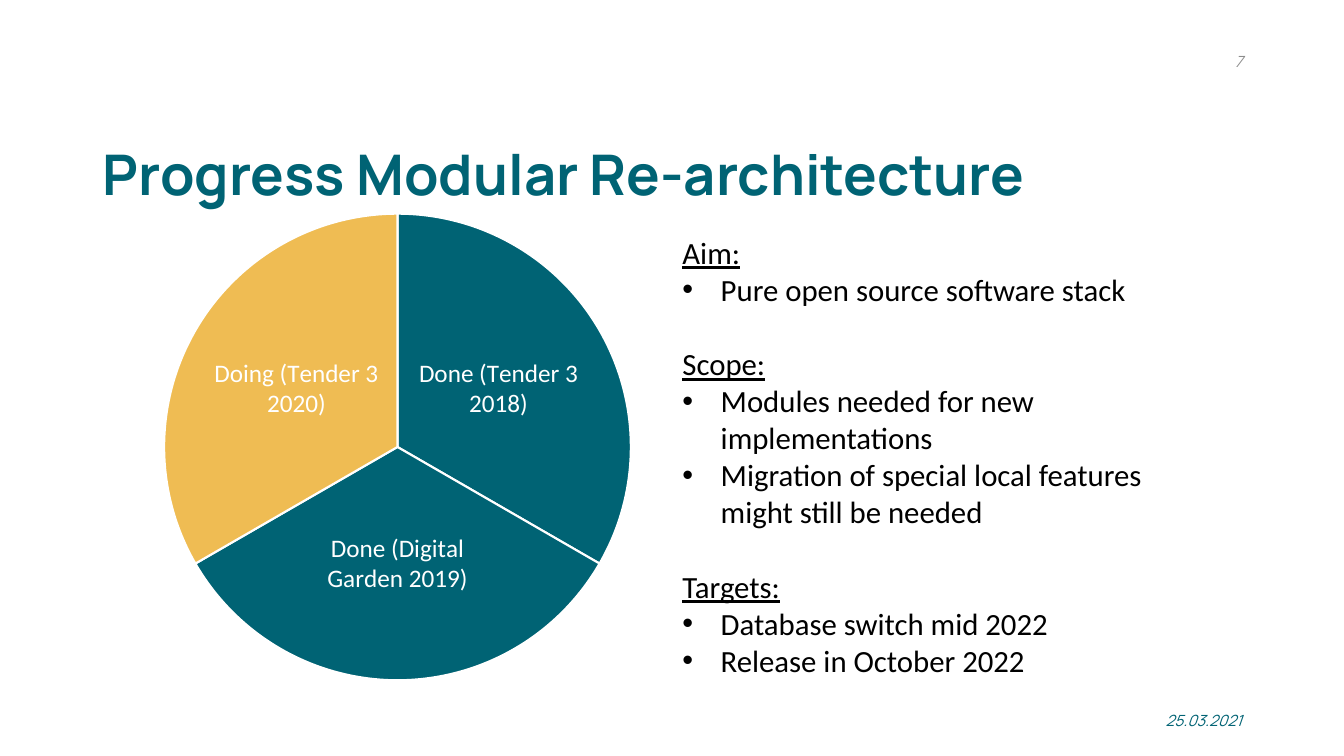
from dataclasses import dataclass

import pptx
import pptx.chart.data
import pptx.dml.color
import pptx.enum.chart
import pptx.enum.text
import pptx.oxml
import pptx.oxml.ns
import pptx.util

Inches = pptx.util.Inches
Pt = pptx.util.Pt
Align = pptx.enum.text.PP_ALIGN
Anchor = pptx.enum.text.MSO_ANCHOR


@dataclass(frozen=True)
class Theme:
    teal: str = "006374"
    amber: str = "EFBC53"
    gray: str = "8C8C8C"
    black: str = "000000"
    white: str = "FFFFFF"
    heading_font: str = "Manrope"
    body_font: str = "Calibri"
    title_size: float = 40
    body_size: float = 22
    label_size: float = 18
    footer_size: float = 11
    section_gap: float = 26.8


THEME = Theme()

STAGES = [
    ("Done (Tender 3 2018)", THEME.teal),
    ("Done (Digital Garden 2019)", THEME.teal),
    ("Doing (Tender 3 2020)", THEME.amber),
]

SECTIONS = [
    ("Aim:", ["Pure open source software stack"]),
    ("Scope:", ["Modules needed for new implementations",
                "Migration of special local features might still be needed"]),
    ("Targets:", ["Database switch mid 2022", "Release in October 2022"]),
]


def rgb(color):
    return pptx.dml.color.RGBColor.from_string(color)


def style_font(font, name, size, color, bold=False, italic=False, underline=False):
    font.name = name
    font.size = Pt(size)
    font.color.rgb = rgb(color)
    font.bold = bold
    font.italic = italic
    font.underline = underline


def add_frame(slide, left, top, width, height, anchor=Anchor.MIDDLE):
    shape = slide.shapes.add_textbox(Inches(left), Inches(top), Inches(width), Inches(height))
    frame = shape.text_frame
    frame.word_wrap = True
    frame.vertical_anchor = anchor
    return frame


def write(paragraph, text, align=Align.LEFT, line_spacing=None, space_before=0, **font_format):
    paragraph.alignment = align
    paragraph.line_spacing = line_spacing
    if space_before:
        paragraph.space_before = Pt(space_before)
    run = paragraph.add_run()
    run.text = text
    style_font(run.font, **font_format)


def add_bullet(paragraph):
    properties = paragraph._p.get_or_add_pPr()
    properties.set("marL", str(Inches(0.38)))
    properties.set("indent", str(Inches(-0.38)))
    namespace = pptx.oxml.ns.nsdecls("a")
    properties.append(pptx.oxml.parse_xml(f'<a:buFont {namespace} typeface="Arial"/>'))
    properties.append(pptx.oxml.parse_xml(f'<a:buChar {namespace} char="•"/>'))


def add_corner_note(slide, text, top, color):
    frame = add_frame(slide, 9.42, top, 3, 0.4)
    write(frame.paragraphs[0], text, align=Align.RIGHT, name=THEME.heading_font,
          size=THEME.footer_size, color=color, italic=True)


def add_sections(slide):
    frame = add_frame(slide, 6.67, 2.27, 5.45, 4.68, anchor=Anchor.TOP)
    body = dict(name=THEME.body_font, size=THEME.body_size, color=THEME.black)
    for index, (heading, points) in enumerate(SECTIONS):
        paragraph = frame.add_paragraph() if index else frame.paragraphs[0]
        write(paragraph, heading, space_before=THEME.section_gap if index else 0,
              underline=True, **body)
        for point in points:
            paragraph = frame.add_paragraph()
            add_bullet(paragraph)
            write(paragraph, point, **body)


def set_plot_layout(chart, x, y, w, h):
    fractions = "".join(f'<c:{key} val="{value}"/>'
                        for key, value in zip("xywh", (x, y, w, h)))
    layout = pptx.oxml.parse_xml(
        f'<c:layout {pptx.oxml.ns.nsdecls("c")}><c:manualLayout>'
        '<c:layoutTarget val="inner"/><c:xMode val="edge"/><c:yMode val="edge"/>'
        f'{fractions}</c:manualLayout></c:layout>')
    plot_area = chart._chartSpace.chart.plotArea
    for existing in plot_area.findall(pptx.oxml.ns.qn("c:layout")):
        plot_area.remove(existing)
    plot_area.insert(0, layout)


def add_progress_pie(slide):
    data = pptx.chart.data.CategoryChartData()
    data.categories = [label for label, color in STAGES]
    data.add_series("Series 1", [33] * len(STAGES))
    chart = slide.shapes.add_chart(
        pptx.enum.chart.XL_CHART_TYPE.PIE,
        Inches(0.65), Inches(1.97), Inches(6.52), Inches(4.98), data).chart
    chart.has_title = False
    chart.has_legend = False
    style_font(chart.font, THEME.body_font, THEME.label_size, THEME.black)
    set_plot_layout(chart, 0.15, 0.03, 0.71, 0.93)

    plot = chart.plots[0]
    plot.vary_by_categories = True
    for index, (label, color) in enumerate(STAGES):
        slice_format = plot.series[0].points[index].format
        slice_format.fill.solid()
        slice_format.fill.fore_color.rgb = rgb(color)
        slice_format.line.color.rgb = rgb(THEME.white)
        slice_format.line.width = Pt(1.5)

    labels = plot.series[0].data_labels
    labels.show_category_name = True
    labels.show_value = False
    labels.show_percentage = False
    labels.position = pptx.enum.chart.XL_LABEL_POSITION.CENTER
    style_font(labels.font, THEME.body_font, THEME.label_size, THEME.white)


def main():
    presentation = pptx.Presentation()
    presentation.slide_width = Inches(13.33)
    presentation.slide_height = Inches(7.5)
    slide = presentation.slides.add_slide(presentation.slide_layouts[6])

    title = add_frame(slide, 0.92, 1.24, 11.5, 1.03)
    write(title.paragraphs[0], "Progress Modular Re-architecture", line_spacing=0.9,
          name=THEME.heading_font, size=THEME.title_size, color=THEME.teal, bold=True)
    add_corner_note(slide, "25.03.2021", 6.95, THEME.teal)
    add_corner_note(slide, "7", 0.41, THEME.gray)
    add_progress_pie(slide)
    add_sections(slide)
    presentation.save("out.pptx")


if __name__ == "__main__":
    main()
